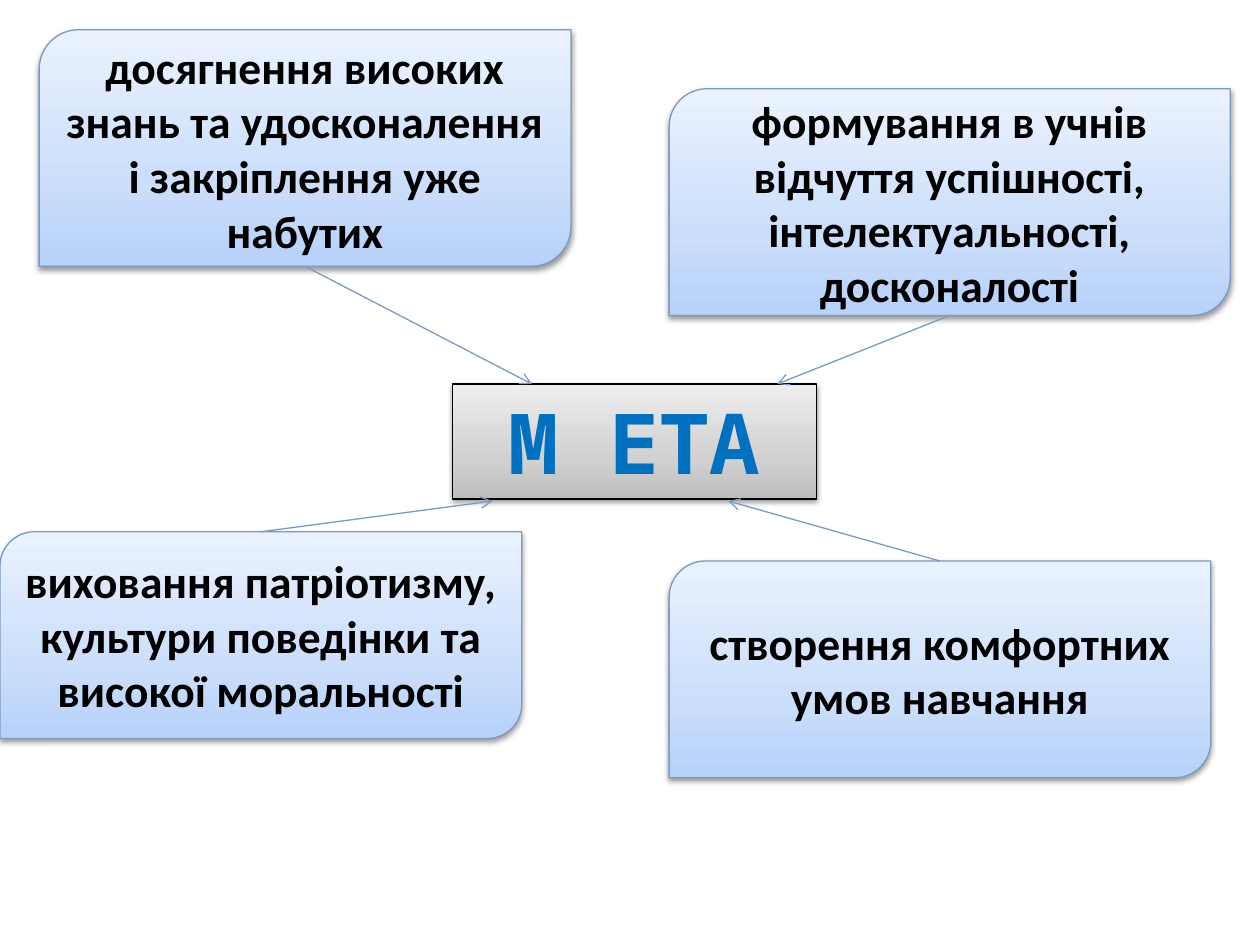
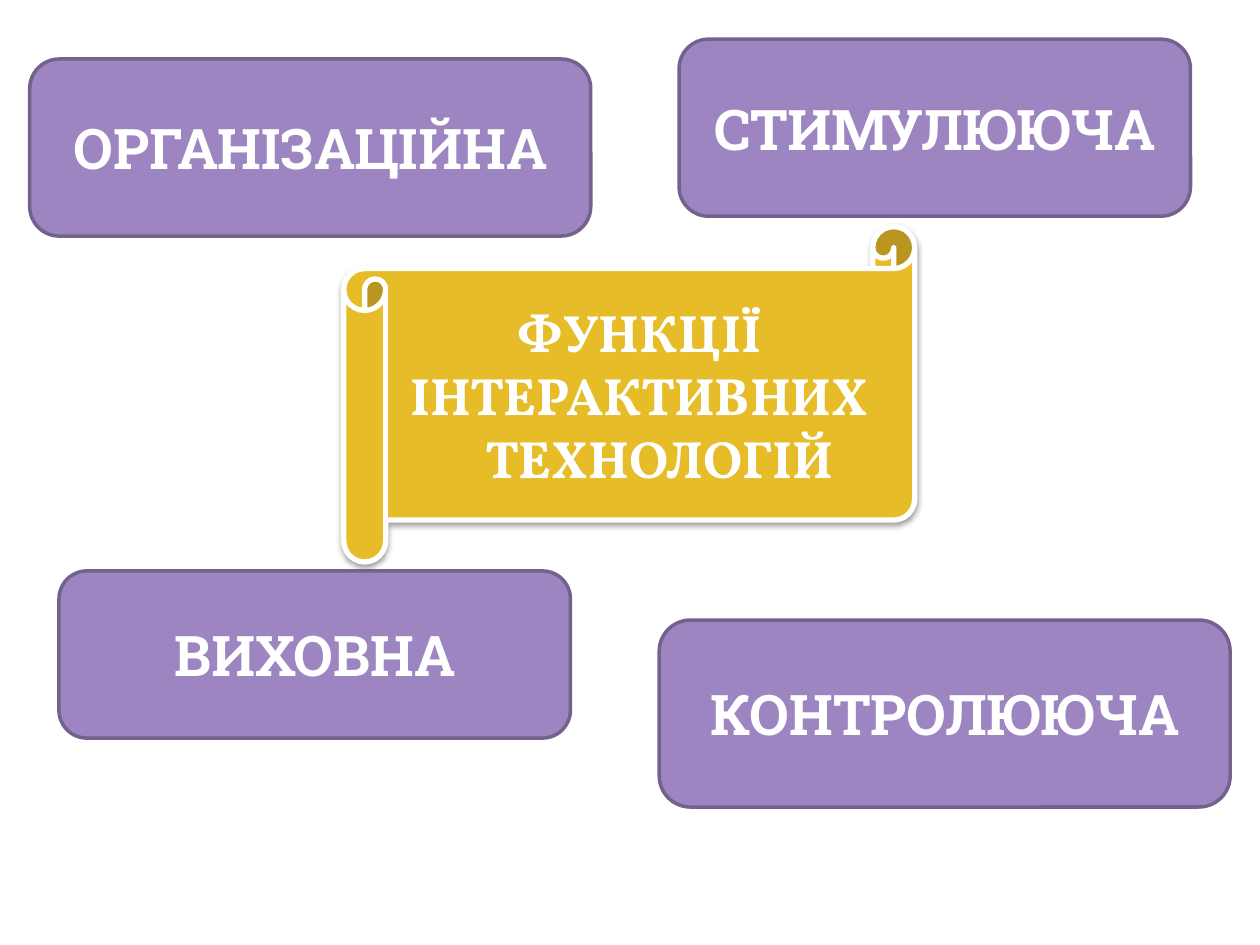
from dataclasses import dataclass
import copy

import pptx
import pptx.dml.color
import pptx.enum.shapes
import pptx.enum.text
import pptx.oxml.ns
import pptx.oxml.xmlchemy
import pptx.util
from lxml import etree

Cm = pptx.util.Cm
Pt = pptx.util.Pt
qn = pptx.oxml.ns.qn
Shapes = pptx.enum.shapes.MSO_SHAPE
Anchor = pptx.enum.text.MSO_ANCHOR

BLACK, WHITE = "000000", "FFFFFF"
GRAY_FADE = ("BDBDBD", "D1D1D1", "EEEEEE")
BLUE_FADE = ("B6D1FA", "CBDEFA", "EAF2FE")
FADE_POSITIONS = (0, 0.35, 1)
BLUE_LINE = "7C9ABF"

# Connection sites of a rectangle with two rounded corners
SITE_BOTTOM, SITE_TOP = 1, 3


@dataclass(frozen=True)
class Style:
    preset: int
    fill: str | tuple[str, ...]
    line: str
    line_width: float
    font: str
    size: int
    color: str
    shadow: bool = True


@dataclass(frozen=True)
class Box:
    """Text with its place in centimetres."""
    text: str
    left: float
    top: float
    width: float
    height: float


@dataclass(frozen=True)
class Aim:
    """A box whose arrow runs from one of its sides to a tip."""
    box: Box
    site: int
    tip: tuple[float, float]


GOAL_STYLE = Style(Shapes.RECTANGLE, GRAY_FADE, BLACK, 0.75, "Noto Sans Mono", 48, "0070C0")
AIM_STYLE = Style(Shapes.ROUND_2_DIAG_RECTANGLE, BLUE_FADE, BLUE_LINE, 0.75, "Calibri", 26, BLACK)
SCROLL_STYLE = Style(Shapes.HORIZONTAL_SCROLL, "E7BC29", WHITE, 3, "Vollkorn", 30, WHITE)
FUNCTION_STYLE = Style(Shapes.ROUNDED_RECTANGLE, "9C85C0", "73628E", 2, "Roboto Slab", 32, WHITE,
                       shadow=False)

GOAL = Box("М ЕТА", 9.12, 7.74, 7.34, 2.32)
AIMS = (
    Aim(Box("досягнення високих знань та удосконалення і закріплення уже набутих",
            0.79, 0.6, 10.72, 4.77), SITE_BOTTOM, (10.72, 7.74)),
    Aim(Box("формування в учнів відчуття успішності, інтелектуальності, досконалості",
            13.49, 1.79, 11.31, 4.57), SITE_BOTTOM, (15.67, 7.74)),
    Aim(Box("виховання патріотизму, культури поведінки та високої моральності",
            0, 10.72, 10.52, 4.17), SITE_TOP, (9.93, 10.1)),
    Aim(Box("створення комфортних умов навчання",
            13.49, 11.31, 10.92, 4.37), SITE_TOP, (14.68, 10.1)),
)

SCROLL = Box("ФУНКЦІЇ\nІНТЕРАКТИВНИХ ТЕХНОЛОГІЙ", 6.93, 4.57, 11.51, 6.76)
FUNCTIONS = (
    Box("СТИМУЛЮЮЧА", 13.69, 0.79, 10.31, 3.57),
    Box("ОРГАНІЗАЦІЙНА", 0.6, 1.19, 11.31, 3.57),
    Box("КОНТРОЛЮЮЧА", 13.29, 12.5, 11.51, 3.77),
    Box("ВИХОВНА", 1.19, 11.51, 10.31, 3.37),
)


def rgb(value: str) -> pptx.dml.color.RGBColor:
    return pptx.dml.color.RGBColor.from_string(value)


def fill_with_fade(shape, colors: tuple[str, ...]) -> None:
    """Fade the colours from the bottom edge to the top."""
    shape.fill.gradient()
    shape.fill.gradient_angle = 90
    stop_list = shape._element.spPr.find(".//" + qn("a:gsLst"))
    stop_list.append(copy.deepcopy(stop_list[0]))
    for stop, color, position in zip(shape.fill.gradient_stops, colors, FADE_POSITIONS):
        stop.color.rgb = rgb(color)
        stop.position = position


def add_soft_shadow(shape) -> None:
    effects = shape._element.spPr.find(qn("a:effectLst"))
    shadow = etree.SubElement(effects, qn("a:outerShdw"), blurRad="40000", dist="20000",
                              dir="5400000", rotWithShape="0")
    color = etree.SubElement(shadow, qn("a:srgbClr"), val=BLACK)
    etree.SubElement(color, qn("a:alpha"), val="38000")


def add_box(page, box: Box, style: Style):
    shape = page.shapes.add_shape(style.preset, Cm(box.left), Cm(box.top),
                                  Cm(box.width), Cm(box.height))
    if isinstance(style.fill, tuple):
        fill_with_fade(shape, style.fill)
    else:
        shape.fill.solid()
        shape.fill.fore_color.rgb = rgb(style.fill)
    shape.line.color.rgb = rgb(style.line)
    shape.line.width = Pt(style.line_width)
    shape.shadow.inherit = False
    if style.shadow:
        add_soft_shadow(shape)

    frame = shape.text_frame
    frame.text = box.text
    frame.word_wrap = True
    frame.vertical_anchor = Anchor.MIDDLE
    for para in frame.paragraphs:
        para.alignment = pptx.enum.text.PP_ALIGN.CENTER
        for span in para.runs:
            span.font.name = style.font
            span.font.size = Pt(style.size)
            span.font.bold = True
            span.font.color.rgb = rgb(style.color)
    return shape


def add_arrow(page, shape, aim: Aim) -> None:
    start_x = shape.left + shape.width // 2
    start_y = shape.top + (shape.height if aim.site == SITE_BOTTOM else 0)
    tip_x, tip_y = map(Cm, aim.tip)
    arrow = page.shapes.add_connector(pptx.enum.shapes.MSO_CONNECTOR.STRAIGHT,
                                      start_x, start_y, tip_x, tip_y)
    arrow.begin_connect(shape, aim.site)
    arrow.begin_x, arrow.begin_y = start_x, start_y
    arrow.end_x, arrow.end_y = tip_x, tip_y
    arrow.line.color.rgb = rgb(BLUE_LINE)
    arrow.line.width = Pt(0.75)
    etree.SubElement(arrow.line._get_or_add_ln(), qn("a:tailEnd"), type="arrow")
    etree.SubElement(arrow._element.spPr, qn("a:effectLst"))


def set_hanging_indent(para, indent: int) -> None:
    properties = para._p.get_or_add_pPr()
    properties.set("marL", str(indent))
    properties.set("indent", str(-indent))


def build_goal_page(page) -> None:
    goal = add_box(page, GOAL, GOAL_STYLE)
    goal.text_frame.vertical_anchor = Anchor.TOP
    goal.text_frame.auto_size = pptx.enum.text.MSO_AUTO_SIZE.SHAPE_TO_FIT_TEXT
    aim_shapes = [add_box(page, aim.box, AIM_STYLE) for aim in AIMS]
    for shape, aim in zip(aim_shapes, AIMS):
        add_arrow(page, shape, aim)


def build_functions_page(page) -> None:
    scroll = add_box(page, SCROLL, SCROLL_STYLE)
    set_hanging_indent(scroll.text_frame.paragraphs[-1], Cm(0.8))
    for box in FUNCTIONS:
        add_box(page, box, FUNCTION_STYLE)


def main() -> None:
    deck = pptx.Presentation()
    deck.slide_width, deck.slide_height = Cm(25.4), Cm(19.05)
    blank = deck.slide_layouts[6]
    for build in (build_goal_page, build_functions_page):
        build(deck.slides.add_slide(blank))
    deck.save("out.pptx")


if __name__ == "__main__":
    main()
